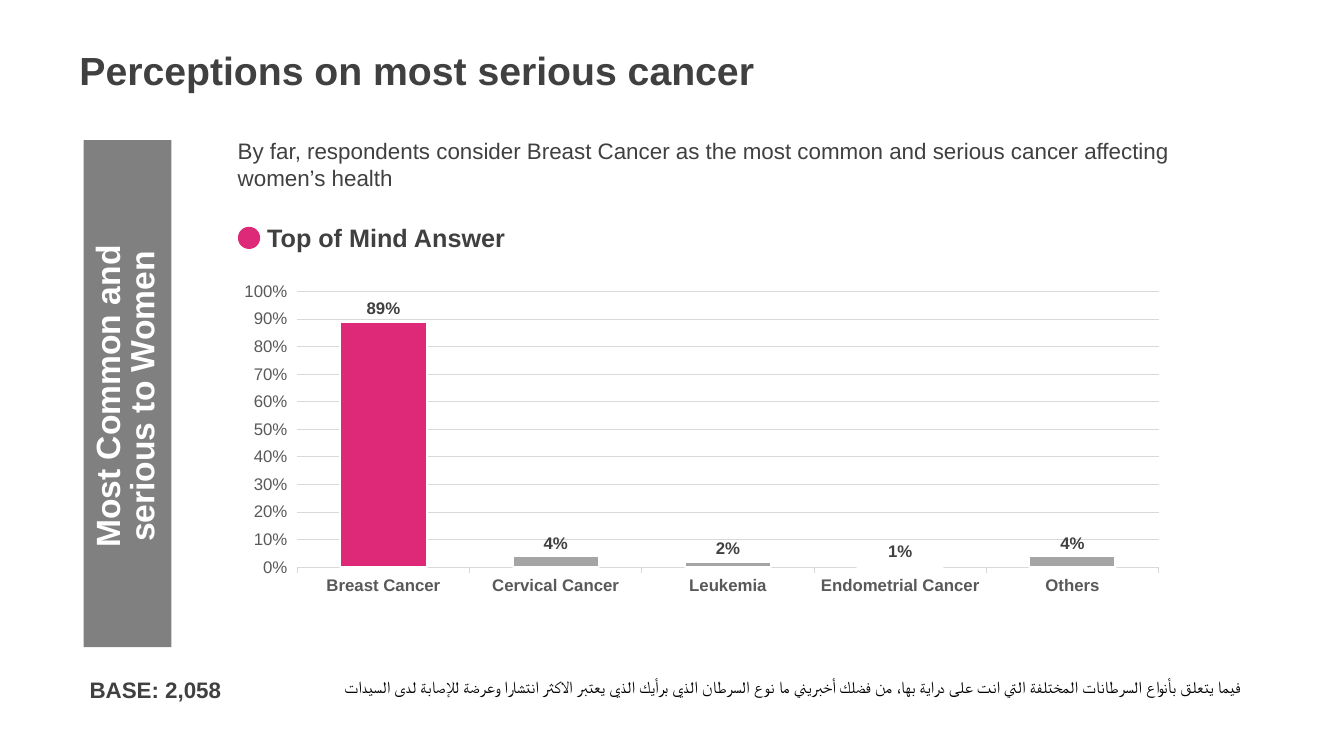
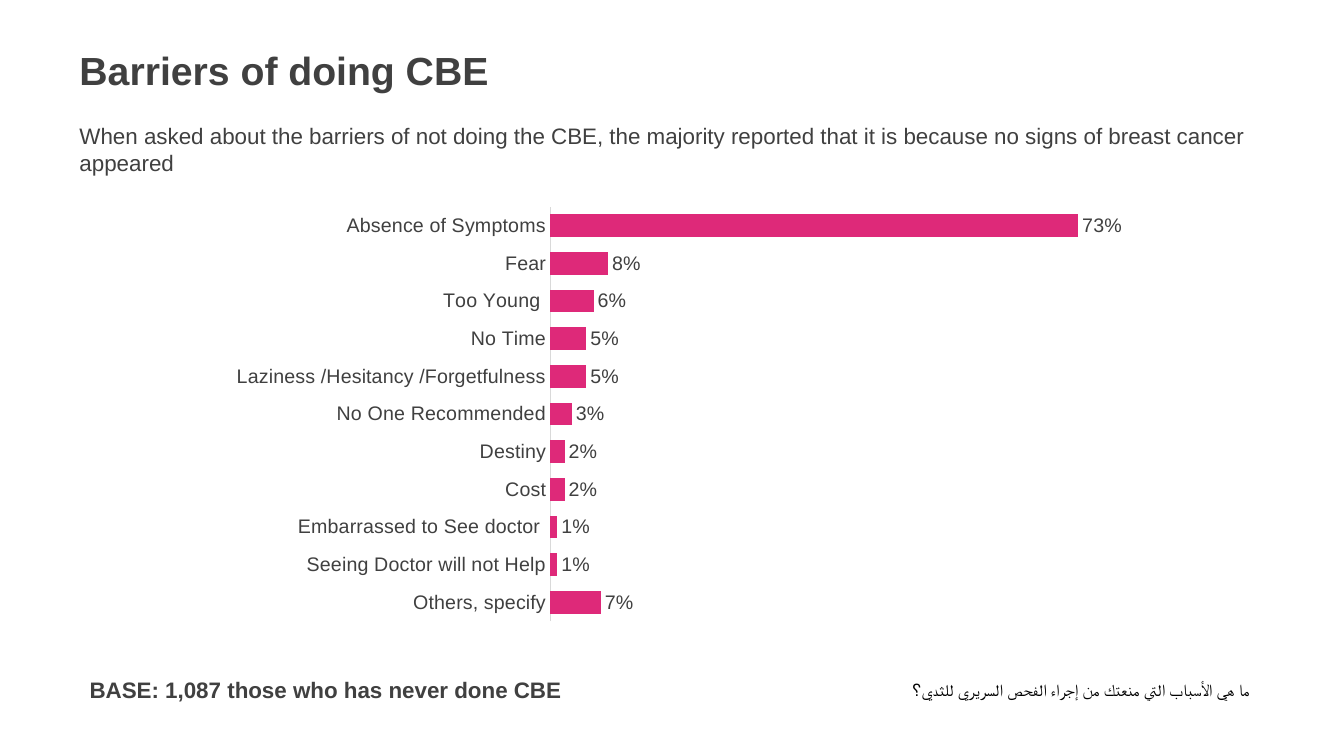
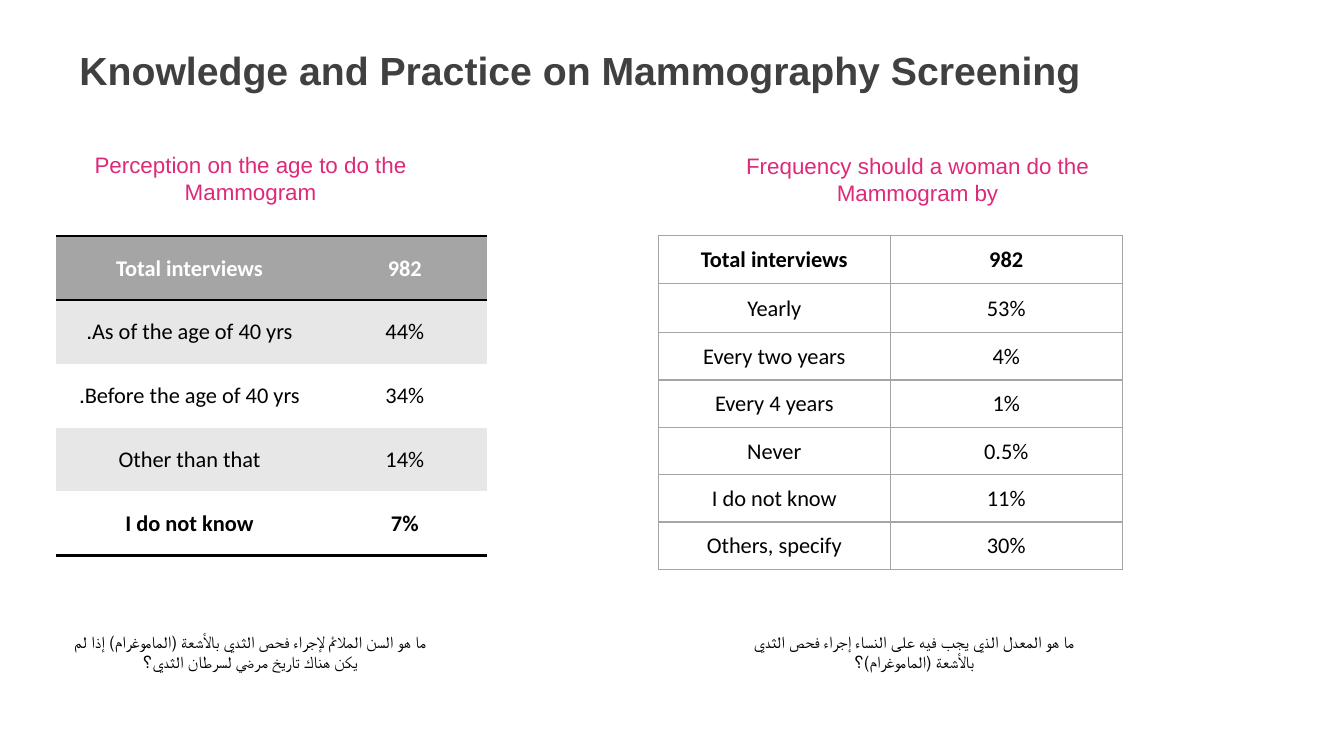
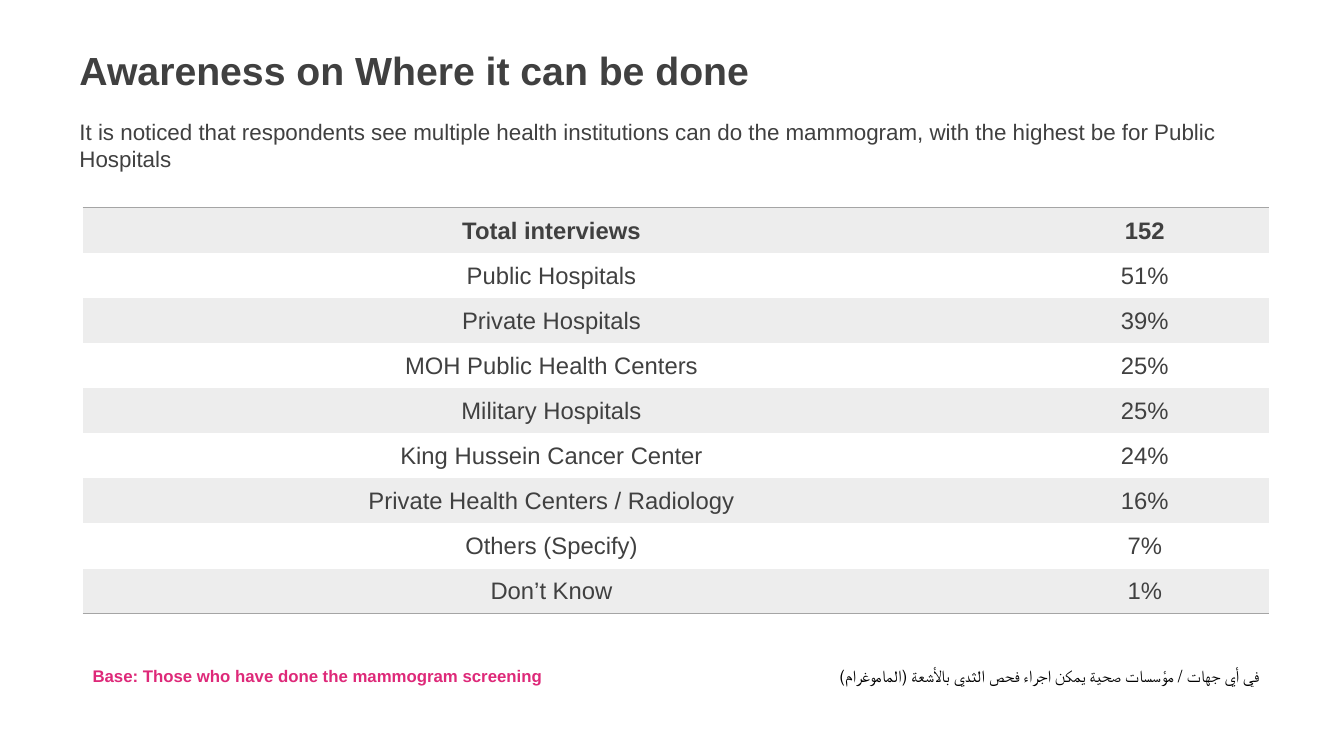
from lxml import etree
from pptx import Presentation
from pptx.chart.data import CategoryChartData
from pptx.dml.color import RGBColor
from pptx.enum.chart import XL_CHART_TYPE as CHART, XL_LABEL_POSITION as LABEL, XL_TICK_MARK as TICK
from pptx.enum.shapes import MSO_SHAPE as SHAPE
from pptx.enum.text import MSO_ANCHOR as ANCHOR, MSO_AUTO_SIZE as AUTO, PP_ALIGN as ALIGN
from pptx.oxml.ns import qn
from pptx.util import Inches, Pt

PINK = RGBColor(0xDE, 0x29, 0x79)
INK = RGBColor(0x40, 0x40, 0x40)
AXIS_INK = RGBColor(0x59, 0x59, 0x59)
BAND = RGBColor(0x80, 0x80, 0x80)
GRAY = RGBColor(0xA5, 0xA5, 0xA5)
RULE = RGBColor(0xD9, 0xD9, 0xD9)
STRIPE = RGBColor(0xE7, 0xE7, 0xE7)
PALE = RGBColor(0xED, 0xED, 0xED)
WHITE = RGBColor(0xFF, 0xFF, 0xFF)
BLACK = RGBColor(0, 0, 0)
NO_STYLE = "{2D5ABB26-0587-4C30-8999-92F81FD0307C}"


def write(slide, text, box, size=16, color=INK, bold=False, font="Arial",
          align=ALIGN.LEFT, rtl=False, inset=True, spacing=None):
    holder = slide.shapes.add_textbox(*map(Inches, box))
    frame = holder.text_frame
    frame.word_wrap = True
    frame.auto_size = AUTO.SHAPE_TO_FIT_TEXT
    if not inset:
        frame.margin_left = frame.margin_right = frame.margin_top = frame.margin_bottom = 0
    frame.text = text
    for line in frame.paragraphs:
        line.alignment = align
        if rtl:
            line._p.get_or_add_pPr().set("rtl", "1")
        if spacing:
            line.line_spacing = spacing
        for key, value in dict(size=Pt(size), bold=bold, name=font).items():
            setattr(line.font, key, value)
        line.font.color.rgb = color
    return holder


def add_grid(slide, left, top, widths, heights, answers, size, font, look):
    table = slide.shapes.add_table(len(answers), len(widths), Inches(left), Inches(top),
                                   Inches(sum(widths)), Inches(sum(heights))).table
    table._tbl.tblPr.find(qn("a:tableStyleId")).text = NO_STYLE
    table.first_row = table.horz_banding = False
    for column, width in zip(table.columns, widths):
        column.width = Inches(width)
    for r, (answer, height) in enumerate(zip(answers, heights)):
        table.rows[r].height = Inches(height)
        fill, color, bold, borders = look(r)
        for c, text in enumerate(answer):
            cell = table.cell(r, c)
            cell.margin_left = cell.margin_right = cell.margin_top = Inches(0.01)
            cell.margin_bottom = 0
            cell.vertical_anchor = ANCHOR.MIDDLE
            cell.text = text
            line = cell.text_frame.paragraphs[0]
            line.alignment = ALIGN.CENTER
            if text.endswith("."):
                line._p.get_or_add_pPr().set("rtl", "1")
            for key, value in dict(size=Pt(size), bold=bold, name=font).items():
                setattr(line.font, key, value)
            line.font.color.rgb = color
            if fill is None:
                cell.fill.background()
            else:
                cell.fill.solid()
                cell.fill.fore_color.rgb = fill
            sides = [side for side in "LRTB" if side in borders]
            for place, side in enumerate(sides):
                border_color, points = borders[side]
                edge = etree.Element(qn(f"a:ln{side}"), w=str(Pt(points)))
                paint = etree.SubElement(edge, qn("a:solidFill"))
                etree.SubElement(paint, qn("a:srgbClr"), val=str(border_color))
                cell._tc.get_or_add_tcPr().insert(place, edge)


prs = Presentation()
prs.slide_width, prs.slide_height = Inches(13.33), Inches(7.5)

slides = []
for title in ["Perceptions on most serious cancer", "Barriers of doing CBE",
              "Knowledge and Practice on Mammography Screening", "Awareness on Where it can be done"]:
    slide = prs.slides.add_slide(prs.slide_layouts[6])
    write(slide, title, (0.69, 0.41, 12.06, 0.57), size=28, bold=True)
    slides.append(slide)
perceptions, barriers, knowledge, awareness = slides

for slide, summary, box in [
    (perceptions, "By far, respondents consider Breast Cancer as the most common and serious cancer "
     "affecting women’s health", (2.26, 1.31, 10.24, 0.64)),
    (barriers, "When asked about the barriers of not doing the CBE, the majority reported that it is "
     "because no signs of breast cancer appeared", (0.69, 1.16, 12.06, 0.64)),
    (awareness, "It is noticed that respondents see multiple health institutions can do the mammogram, "
     "with the highest be for Public Hospitals", (0.69, 1.12, 11.9, 0.64)),
]:
    write(slide, summary, box)

for slide, question, box, align in [
    (perceptions, "فيما يتعلق بأنواع السرطانات المختلفة التي انت على دراية بها، من فضلك أخبريني ما نوع "
     "السرطان الذي برأيك الذي يعتبر الاكثر انتشارا وعرضة للإصابة لدى السيدات",
     (2.65, 6.66, 9.77, 0.3), ALIGN.RIGHT),
    (barriers, "ما هي الأسباب التي منعتك من إجراء الفحص السريري للثدي؟",
     (8.81, 6.69, 3.69, 0.3), ALIGN.RIGHT),
    (knowledge, "ما هو السن الملائم لإجراء فحص الثدي بالأشعة (الماموغرام) إذا لم يكن هناك تاريخ مرضي "
     "لسرطان الثدي؟", (0.56, 6.22, 3.85, 0.5), ALIGN.CENTER),
    (knowledge, "ما هو المعدل الذي يجب فيه على النساء إجراء فحص الثدي بالأشعة (الماموغرام)؟",
     (7.19, 6.22, 3.76, 0.5), ALIGN.CENTER),
    (awareness, "في أي جهات / مؤسسات صحية يمكن اجراء فحص الثدي بالأشعة (الماموغرام)",
     (7.75, 6.56, 4.84, 0.3), ALIGN.RIGHT),
]:
    write(slide, question, box, size=12, color=BLACK, font="Calibri", align=align, rtl=True)

write(perceptions, "BASE: 2,058", (0.79, 6.66, 2.29, 0.37), bold=True)
write(barriers, "BASE: 1,087 those who has never done CBE", (0.79, 6.66, 7.35, 0.37), bold=True)
write(awareness, "Base: Those who have done the mammogram screening", (0.82, 6.56, 5.73, 0.3),
      size=12, color=PINK, bold=True)

for mark, box, color in [(SHAPE.RECTANGLE, (0.83, 1.39, 0.87, 5.03), BAND),
                         (SHAPE.OVAL, (2.36, 2.25, 0.22, 0.22), PINK)]:
    shape = perceptions.shapes.add_shape(mark, *map(Inches, box))
    shape.shadow.inherit = False
    shape.fill.solid()
    shape.fill.fore_color.rgb = color
    shape.line.fill.background()
write(perceptions, "Top of Mind Answer", (2.65, 2.21, 2.8, 0.3), size=18, bold=True, inset=False)
band_text = write(perceptions, "Most Common and\nserious to Women", (-1.28, 3.59, 5.09, 0.69), size=24,
                  color=WHITE, bold=True, align=ALIGN.CENTER, inset=False, spacing=0.85)
band_text.rotation = 270

cancers = {"Breast Cancer": 0.89, "Cervical Cancer": 0.04, "Leukemia": 0.02,
           "Endometrial Cancer": 0.01, "Others": 0.04}
reasons = {"Absence of Symptoms": 0.73, "Fear": 0.08, "Too Young ": 0.06, "No Time": 0.05,
           "Laziness /Hesitancy /Forgetfulness": 0.05, "No One Recommended": 0.03, "Destiny": 0.02,
           "Cost": 0.02, "Embarrassed to See doctor ": 0.01, "Seeing Doctor will not Help": 0.01,
           "Others, specify": 0.07}
charts = []
for slide, kind, box, shares, gap, top_value, size, bold, axis_ink, color, layout in [
    (perceptions, CHART.COLUMN_CLUSTERED, (2.36, 2.64, 9.83, 3.52), cancers, 100, 1, 12, True,
     AXIS_INK, GRAY, (0.06, 0.072, 0.869, 0.777)),
    (barriers, CHART.BAR_CLUSTERED, (0.44, 1.83, 12.06, 4.46), reasons, 66, 0.8, 14, False,
     INK, PINK, (0.416, 0.05, 0.476, 0.922)),
]:
    data = CategoryChartData(number_format="0%")
    data.categories = list(shares)
    data.add_series("Series 1", list(shares.values()))
    chart = slide.shapes.add_chart(kind, *map(Inches, box), data).chart
    chart.has_legend = chart.has_title = False
    chart.font.name, chart.font.size = "Arial", Pt(size)
    plot = chart.plots[0]
    plot.gap_width, plot.vary_by_categories = gap, False
    bars = plot.series[0]
    bars.invert_if_negative = False
    bars.format.fill.solid()
    bars.format.fill.fore_color.rgb = color
    plot.has_data_labels = True
    labels = plot.data_labels
    for key, value in dict(show_value=True, position=LABEL.OUTSIDE_END, number_format="0%",
                           number_format_is_linked=False).items():
        setattr(labels, key, value)
    names, values = chart.category_axis, chart.value_axis
    names.format.line.color.rgb = RULE
    names.format.line.width = Pt(0.75)
    values.minimum_scale, values.maximum_scale = 0, top_value
    for font, ink, weight in [(labels.font, INK, bold), (names.tick_labels.font, axis_ink, bold),
                              (values.tick_labels.font, axis_ink, False)]:
        font.name, font.size, font.bold = "Arial", Pt(size), weight
        font.color.rgb = ink
    area = chart._chartSpace.chart.plotArea
    for old in area.findall(qn("c:layout")):
        area.remove(old)
    place = etree.Element(qn("c:layout"))
    manual = etree.SubElement(place, qn("c:manualLayout"))
    for tag, value in [("layoutTarget", "inner"), ("xMode", "edge"), ("yMode", "edge"),
                       *zip("xywh", map(str, layout))]:
        etree.SubElement(manual, qn(f"c:{tag}"), val=value)
    area.insert(0, place)
    charts.append(chart)

cancer_chart, reason_chart = charts
cancer_bars = cancer_chart.plots[0].series[0]
cancer_bars.format.line.color.rgb = WHITE
cancer_bars.format.line.width = Pt(1.5)
breast = cancer_bars.points[0].format
breast.fill.solid()
breast.fill.fore_color.rgb = PINK
breast.line.color.rgb = WHITE
breast.line.width = Pt(1.5)
percent_axis = cancer_chart.value_axis
percent_axis.major_unit = 0.1
percent_axis.format.line.fill.background()
percent_axis.major_gridlines.format.line.color.rgb = RULE
percent_axis.major_gridlines.format.line.width = Pt(0.75)
percent_axis.tick_labels.number_format = "0%"
percent_axis.tick_labels.number_format_is_linked = False

reason_chart.category_axis.reverse_order = True
reason_chart.category_axis.major_tick_mark = TICK.NONE
reason_chart.value_axis.has_major_gridlines = False
reason_chart.value_axis.visible = False

write(knowledge, "Perception on the age to do the Mammogram", (0.56, 1.45, 3.85, 0.64),
      color=PINK, align=ALIGN.CENTER)
write(knowledge, "Frequency should a woman do the Mammogram by", (7.19, 1.46, 3.82, 0.64),
      color=PINK, align=ALIGN.CENTER)

ages = [("Total interviews", "982"), ("As of the age of 40 yrs.", "44%"),
        ("Before the age of 40 yrs.", "34%"), ("Other than that", "14%"), ("I do not know", "7%")]
frequencies = [("Total interviews", "982"), ("Yearly", "53%"), ("Every two years", "4%"),
               ("Every 4 years", "1%"), ("Never", "0.5%"), ("I do not know", "11%"),
               ("Others, specify", "30%")]
places = [("Total interviews", "152"), ("Public Hospitals", "51%"), ("Private Hospitals", "39%"),
          ("MOH Public Health Centers", "25%"), ("Military Hospitals", "25%"),
          ("King Hussein Cancer Center", "24%"), ("Private Health Centers / Radiology", "16%"),
          ("Others (Specify)", "7%"), ("Don’t Know", "1%")]

heavy, thin = (BLACK, 2), (GRAY, 1)
age_edges = {0: {"T": heavy, "B": heavy}, len(ages) - 1: {"B": heavy}}
place_edges = {0: {"T": thin}, len(places) - 1: {"B": thin}}

add_grid(knowledge, 0.56, 2.34, [2.64, 1.63], [0.634] * len(ages), ages, 16, "Calibri",
         lambda r: (GRAY if r == 0 else STRIPE if r % 2 else WHITE, BLACK if r else WHITE,
                    r in age_edges, age_edges.get(r, {})))
add_grid(knowledge, 6.53, 2.34, [2.3, 2.3], [0.47, 0.49] + [0.47] * 5, frequencies, 16, "Calibri",
         lambda r: (None, BLACK, r == 0, dict.fromkeys("LRTB", thin)))
add_grid(awareness, 0.82, 2.06, [9.3, 2.47], [4.03 / len(places)] * len(places), places, 17, "Arial",
         lambda r: (None if r % 2 else PALE, INK, r == 0, place_edges.get(r, {})))

prs.save("out.pptx")
